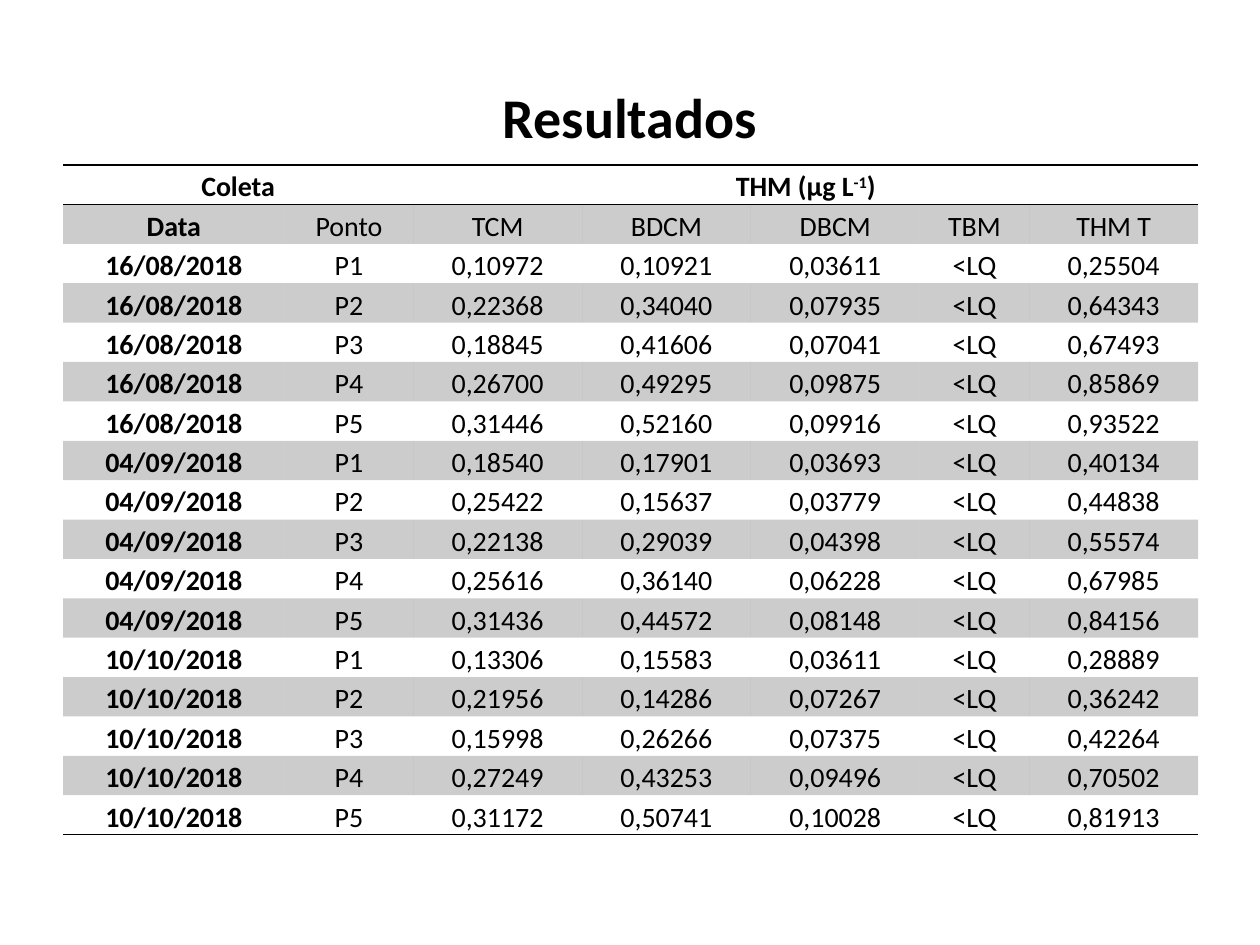
"""Build the slide with the table of trihalomethane results."""
from lxml import etree
from pptx import Presentation
from pptx import util as u
from pptx.dml.color import RGBColor
from pptx.enum import text
from pptx.oxml import ns

TITLE = "Resultados"
GROUPS = [(0, 1, [("Coleta", False)]),
          (2, 6, [("THM (µg L", False), ("-1", True), (")", False)])]
HEADINGS = ["Data", "Ponto", "TCM", "BDCM", "DBCM", "TBM", "THM T"]
READINGS = {
    "16/08/2018": [
        ("0,10972", "0,10921", "0,03611", "<LQ", "0,25504"),
        ("0,22368", "0,34040", "0,07935", "<LQ", "0,64343"),
        ("0,18845", "0,41606", "0,07041", "<LQ", "0,67493"),
        ("0,26700", "0,49295", "0,09875", "<LQ", "0,85869"),
        ("0,31446", "0,52160", "0,09916", "<LQ", "0,93522"),
    ],
    "04/09/2018": [
        ("0,18540", "0,17901", "0,03693", "<LQ", "0,40134"),
        ("0,25422", "0,15637", "0,03779", "<LQ", "0,44838"),
        ("0,22138", "0,29039", "0,04398", "<LQ", "0,55574"),
        ("0,25616", "0,36140", "0,06228", "<LQ", "0,67985"),
        ("0,31436", "0,44572", "0,08148", "<LQ", "0,84156"),
    ],
    "10/10/2018": [
        ("0,13306", "0,15583", "0,03611", "<LQ", "0,28889"),
        ("0,21956", "0,14286", "0,07267", "<LQ", "0,36242"),
        ("0,15998", "0,26266", "0,07375", "<LQ", "0,42264"),
        ("0,27249", "0,43253", "0,09496", "<LQ", "0,70502"),
        ("0,31172", "0,50741", "0,10028", "<LQ", "0,81913"),
    ],
}
COLUMN_WIDTHS = [1.76, 1.02, 1.34, 1.34, 1.34, 0.87, 1.34]
BLACK = RGBColor(0, 0, 0)
BAND_OPACITY = 20
NO_STYLE = "{2D5ABB26-0587-4C30-8999-92F81FD0307C}"


def write(frame, pieces, size=16, bold=False, spacing=None):
    paragraph = frame.paragraphs[0]
    paragraph.alignment = text.PP_ALIGN.CENTER
    paragraph.line_spacing = spacing
    for words, raised in pieces:
        run = paragraph.add_run()
        run.text = words
        run.font.name = "Calibri"
        run.font.size = u.Pt(size)
        run.font.bold = bold
        run.font.color.rgb = BLACK
        if raised:
            run.font._element.set("baseline", "30000")


def shade(cell):
    cell.fill.solid()
    cell.fill.fore_color.rgb = BLACK
    color = cell._tc.tcPr.find(".//" + ns.qn("a:srgbClr"))
    etree.SubElement(color, ns.qn("a:alpha"), val=str(BAND_OPACITY * 1000))


def rule(cell, *sides):
    properties = cell._tc.get_or_add_tcPr()
    for position, side in enumerate(sides):
        line = etree.Element(ns.qn("a:ln" + side), w=str(u.Pt(1)))
        ink = etree.SubElement(line, ns.qn("a:solidFill"))
        etree.SubElement(ink, ns.qn("a:srgbClr"), val=str(BLACK))
        properties.insert(position, line)


def fill_cell(cell, pieces, bold=False, anchor=text.MSO_ANCHOR.MIDDLE):
    cell.margin_left = cell.margin_right = u.Inches(0.05)
    cell.margin_top = cell.margin_bottom = 0
    cell.vertical_anchor = anchor
    write(cell.text_frame, pieces, bold=bold, spacing=1.15)


def add_results(slide):
    rows = [HEADINGS] + [[date, f"P{point}", *values]
                         for date, points in READINGS.items()
                         for point, values in enumerate(points, 1)]
    frame = slide.shapes.add_table(len(rows) + 1, len(HEADINGS), u.Inches(0.5),
                                   u.Inches(1.31), u.Inches(9), u.Inches(4.91))
    results = frame.table
    results.first_row = results.horz_banding = False
    results._tbl.tblPr.find(ns.qn("a:tableStyleId")).text = NO_STYLE
    for column, width in zip(results.columns, COLUMN_WIDTHS):
        column.width = u.Inches(width)

    for first, last, pieces in GROUPS:
        results.cell(0, first).merge(results.cell(0, last))
        fill_cell(results.cell(0, first), pieces, bold=True)
        for column in range(first, last + 1):
            rule(results.cell(0, column), "T", "B")

    for row, values in enumerate(rows, 1):
        for column, value in enumerate(values):
            cell = results.cell(row, column)
            low = column > 1 and values[1] in ("P3", "P4", "P5")
            fill_cell(cell, [(value, False)], bold=column == 0,
                      anchor=text.MSO_ANCHOR.BOTTOM if low else text.MSO_ANCHOR.MIDDLE)
            if row % 2:
                shade(cell)
            if row == len(rows):
                rule(cell, "B")


def main():
    deck = Presentation()
    deck.slide_width, deck.slide_height = u.Inches(10), u.Inches(7.5)
    slide = deck.slides.add_slide(deck.slide_layouts[5])
    heading = slide.shapes.title
    heading.left, heading.top = u.Inches(0.5), u.Inches(0.3)
    heading.width, heading.height = u.Inches(9), u.Inches(1.25)
    heading.text_frame.vertical_anchor = text.MSO_ANCHOR.MIDDLE
    write(heading.text_frame, [(TITLE, False)], size=32, bold=True)
    add_results(slide)
    deck.save("out.pptx")


if __name__ == "__main__":
    main()
